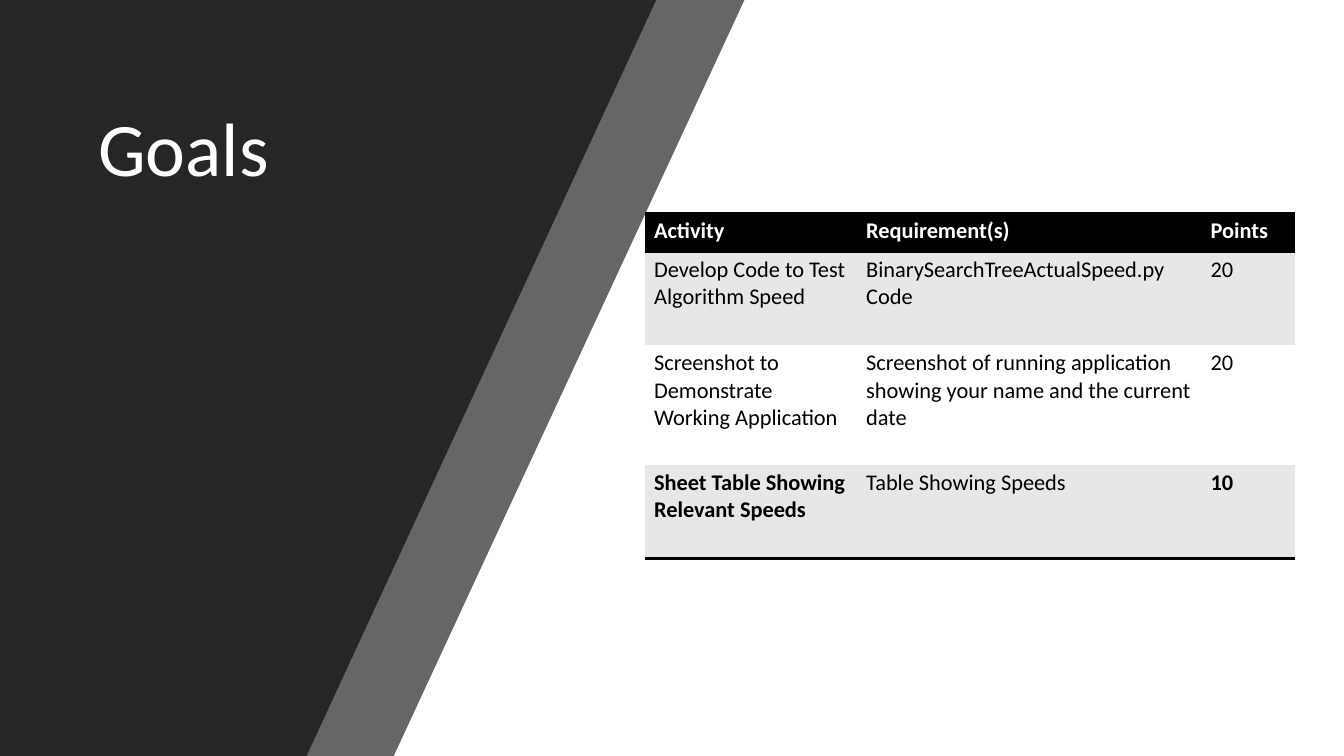
from dataclasses import dataclass

from pptx import Presentation
from pptx.dml.color import RGBColor as RGB
from pptx.enum.shapes import MSO_SHAPE as SHAPE
from pptx.enum.text import MSO_ANCHOR as ANCHOR
from pptx.oxml import parse_xml
from pptx.oxml.ns import nsdecls, qn
from pptx.util import Pt

EMU_PER_PX = 9525
WIDTH, HEIGHT = 1280, 720
NO_STYLE = "{2D5ABB26-0587-4C30-8999-92F81FD0307C}"


@dataclass(frozen=True)
class Theme:
    """Colours, font and type sizes of the slide."""
    black: str = "000000"
    white: str = "FFFFFF"
    dark: str = "262626"
    stripe: str = "E7E7E7"
    font: str = "Calibri"
    title: int = 54
    body: int = 16
    rule: int = 2


THEME = Theme()
COLUMNS = (202, 328, 89)
ROWS = (
    (37, ("Activity", "Requirement(s)", "Points")),
    (89, ("Develop Code to Test Algorithm Speed",
          "BinarySearchTreeActualSpeed.py Code", "20")),
    (114, ("Screenshot to Demonstrate Working Application",
           "Screenshot of running application showing your name and the current date",
           "20")),
    (89, ("Sheet Table Showing Relevant Speeds", "Table Showing Speeds", "10")),
)


def px(n):
    """Turn pixels into EMU."""
    return n * EMU_PER_PX


def paint(sp, color, alpha=None):
    """Give a shape a plain fill without line or shadow."""
    sp.shadow.inherit = False
    sp.line.fill.background()
    sp.fill.solid()
    sp.fill.fore_color.rgb = RGB.from_string(color)
    if alpha is not None:
        clr = sp.fill._xPr.find(qn("a:solidFill"))[0]
        clr.append(parse_xml(f'<a:alpha {nsdecls("a")} val="{alpha * 1000}"/>'))


def style_text(p, size, color, bold=False):
    """Format every run of a paragraph."""
    for r in p.runs:
        r.font.name = THEME.font
        r.font.size = Pt(size)
        r.font.bold = bold
        r.font.color.rgb = RGB.from_string(color)


def add_slanted_panel(slide, top, bottom, color, alpha=None):
    """Draw a full-height panel with a slanted right edge."""
    fb = slide.shapes.build_freeform(0, 0, scale=EMU_PER_PX)
    fb.add_line_segments([(top, 0), (bottom, HEIGHT), (0, HEIGHT)])
    paint(fb.convert_to_shape(), color, alpha)


def add_title(slide, text):
    """Place the slide title."""
    tf = slide.shapes.add_textbox(px(84), px(36), px(407), px(236)).text_frame
    tf.word_wrap = True
    tf.vertical_anchor = ANCHOR.BOTTOM
    tf.margin_bottom = px(88)
    tf.text = text
    p = tf.paragraphs[0]
    p.line_spacing = 0.9
    style_text(p, THEME.title, THEME.white)


def add_borders(cell, sides):
    """Draw black rules on the given sides of a cell."""
    for i, side in enumerate(sides):
        cell._tc.get_or_add_tcPr().insert(i, parse_xml(
            f'<a:ln{side} {nsdecls("a")} w="{Pt(THEME.rule)}"><a:solidFill>'
            f'<a:srgbClr val="{THEME.black}"/></a:solidFill></a:ln{side}>'))


def fill_cell(cell, text, fill, color, bold):
    """Write and colour one table cell."""
    cell.margin_left = cell.margin_right = px(9)
    cell.margin_top = cell.margin_bottom = px(4)
    cell.fill.solid()
    cell.fill.fore_color.rgb = RGB.from_string(fill)
    cell.text = text
    style_text(cell.text_frame.paragraphs[0], THEME.body, color, bold)


def add_goals_table(slide):
    """Build the banded table of goals."""
    last = len(ROWS) - 1
    frame = slide.shapes.add_table(
        len(ROWS), len(COLUMNS), px(614), px(203),
        px(sum(COLUMNS)), px(sum(h for h, _ in ROWS)))
    table = frame.table
    table.first_row = table.horz_banding = False
    table._tbl.tblPr.find(qn("a:tableStyleId")).text = NO_STYLE
    for col, width in zip(table.columns, COLUMNS):
        col.width = px(width)
    for i, (height, texts) in enumerate(ROWS):
        table.rows[i].height = px(height)
        header = i == 0
        fill = THEME.black if header else THEME.stripe if i % 2 else THEME.white
        color = THEME.white if header else THEME.black
        for j, text in enumerate(texts):
            cell = table.cell(i, j)
            fill_cell(cell, text, fill, color, header or (i == last and j != 1))
            if header:
                add_borders(cell, "TB")
            elif i == last:
                add_borders(cell, "B")


def main():
    """Build and save the slide."""
    prs = Presentation()
    prs.slide_width, prs.slide_height = px(WIDTH), px(HEIGHT)
    slide = prs.slides.add_slide(prs.slide_layouts[6])
    bg = slide.background.fill
    bg.solid()
    bg.fore_color.rgb = RGB.from_string(THEME.black)
    sp = slide.shapes.add_shape(SHAPE.RECTANGLE, 0, 0, px(WIDTH), px(HEIGHT))
    paint(sp, THEME.white)
    add_slanted_panel(slide, 709, 375, THEME.dark, alpha=70)
    add_slanted_panel(slide, 625, 292, THEME.dark)
    add_title(slide, "Goals")
    add_goals_table(slide)
    prs.save("out.pptx")


if __name__ == "__main__":
    main()
